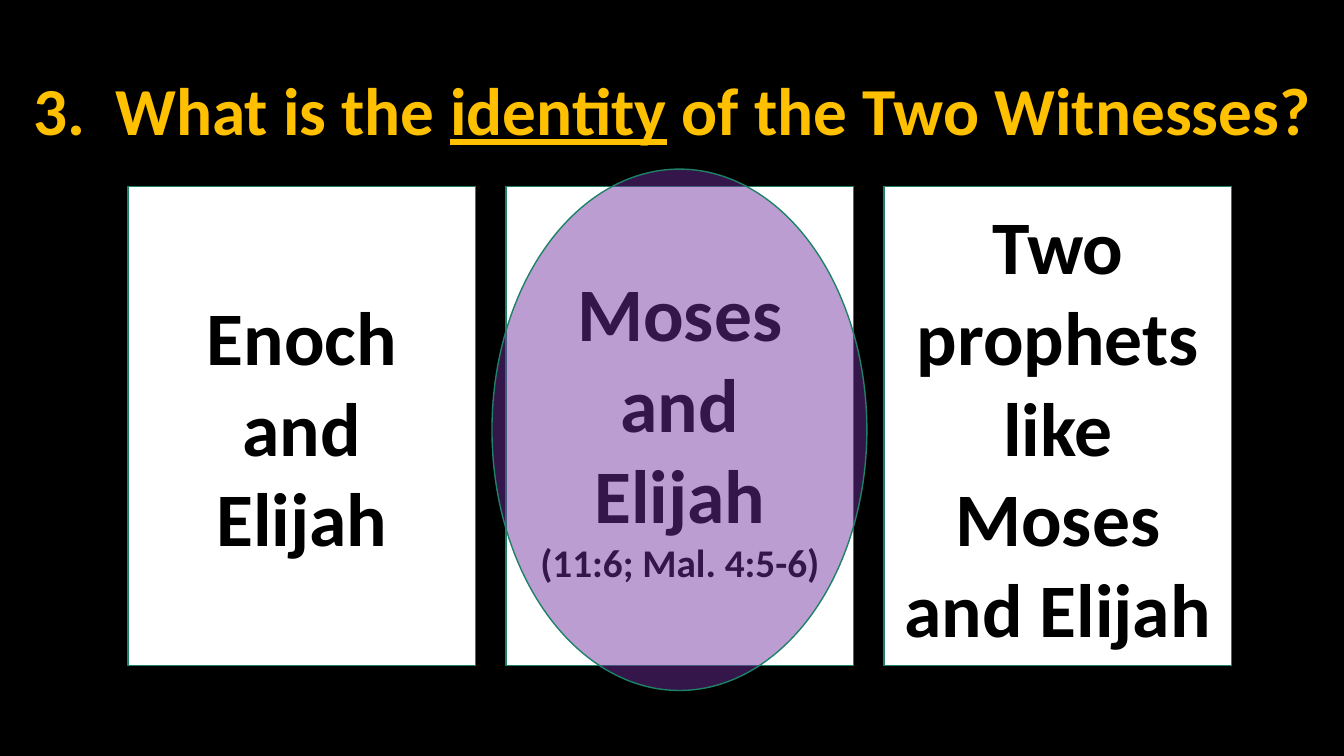
from lxml.etree import SubElement
from pptx import Presentation
from pptx.dml.color import RGBColor
from pptx.enum.shapes import MSO_SHAPE as Shape
from pptx.enum.text import MSO_ANCHOR as Anchor, PP_ALIGN as Align
from pptx.oxml.ns import qn
from pptx.util import Pt

GOLD, BLACK, WHITE, PURPLE, TEAL = "FFC000", "000000", "FFFFFF", "7030A0", "1E8168"


def paint(color_holder, color):
    """Give a fill a solid colour."""
    color_holder.solid()
    color_holder.fore_color.rgb = RGBColor.from_string(color)


def add_text(paragraph, text, size=54, color=BLACK, underline=False):
    paragraph.alignment = Align.CENTER
    run = paragraph.add_run()
    run.text = text
    run.font.name = "Calibri"
    run.font.size = Pt(size)
    run.font.bold = True
    run.font.underline = underline
    run.font.color.rgb = RGBColor.from_string(color)


deck = Presentation()
deck.slide_width, deck.slide_height = Pt(960), Pt(540)
slide = deck.slides.add_slide(deck.slide_layouts[5])
paint(slide.background.fill, BLACK)

# Question
question = slide.shapes.title
question.left, question.top, question.width, question.height = Pt(0), Pt(28.8), Pt(960), Pt(104.4)
question.text_frame.vertical_anchor = Anchor.MIDDLE
question_line = question.text_frame.paragraphs[0]
question_line.line_spacing = 0.9
for words, underline in [("3.  What is the ", False), ("identity", True),
                         (" of the Two Witnesses?", False)]:
    add_text(question_line, words, size=48, color=GOLD, underline=underline)

# Answer cards, then the oval that marks the middle one
answers = [
    [("Enoch", 54), ("and", 54), ("Elijah", 54)],
    [("Moses and", 54), ("Elijah", 54), ("(11:6; Mal. 4:5-6)", 28)],
    [("Two prophets like Moses and Elijah", 54)],
]
outlines = [(Shape.RECTANGLE, 91.4 + 270 * column, 133.2, 248.4, 342, WHITE, lines)
            for column, lines in enumerate(answers)]
outlines.append((Shape.OVAL, 351.4, 120.8, 267.8, 372.4, PURPLE, []))

for kind, left, top, width, height, color, lines in outlines:
    answer = slide.shapes.add_shape(kind, Pt(left), Pt(top), Pt(width), Pt(height))
    answer.shadow.inherit = False
    paint(answer.fill, color)
    paint(answer.line.fill, TEAL)
    answer.line.width = Pt(1)
    frame = answer.text_frame
    frame.word_wrap = True
    frame.vertical_anchor = Anchor.MIDDLE
    for row, (text, size) in enumerate(lines):
        add_text(frame.add_paragraph() if row else frame.paragraphs[0], text, size=size)

# The oval, drawn last, is 47% opaque
oval_color = answer.fill._xPr.find(qn("a:solidFill"))[0]
SubElement(oval_color, qn("a:alpha"), val="47000")

deck.save("out.pptx")
